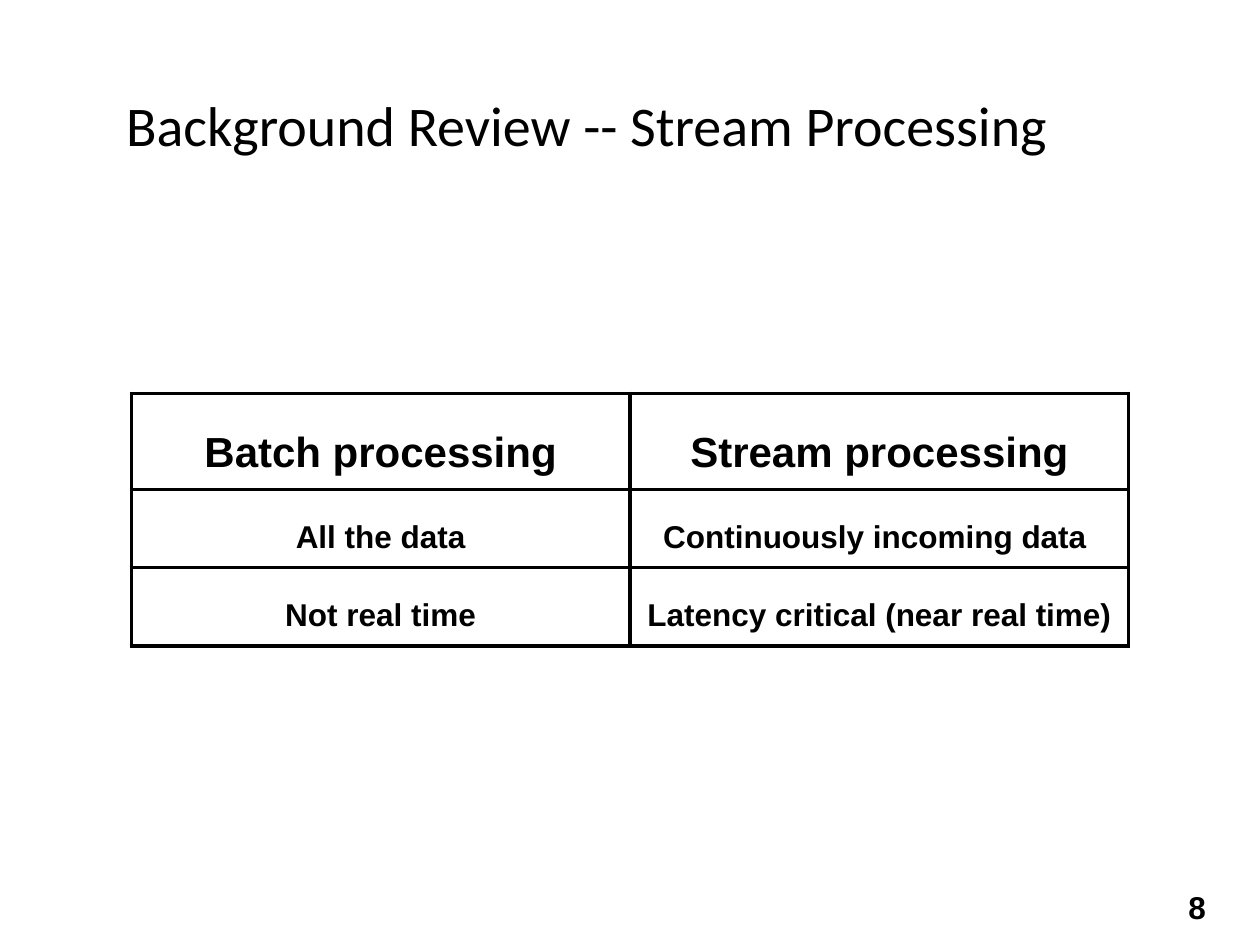
from pptx import Presentation
from pptx.dml.color import RGBColor
from pptx.enum.text import MSO_ANCHOR, PP_ALIGN
from pptx.oxml import parse_xml
from pptx.oxml.ns import nsdecls
from pptx.util import Pt

MIDDLE, BOTTOM = MSO_ANCHOR.MIDDLE, MSO_ANCHOR.BOTTOM
LEFT, CENTER = PP_ALIGN.LEFT, PP_ALIGN.CENTER
TITLE_ONLY = 5
BLACK = "000000"
MARGIN = Pt(7.2)

COMPARISON = [
    ("Batch processing", "Stream processing"),
    ("All the data", "Continuously incoming data "),
    ("Not real time", "Latency critical (near real time)"),
]
ROW_HEIGHTS = (55, 44.5, 44.5)
TEXT_SIZES = (24, 18, 18)
COLUMN_WIDTH = 285


def color(hex_string):
    return RGBColor.from_string(hex_string)


def set_margins(target):
    target.margin_left = target.margin_right = MARGIN
    target.margin_top = target.margin_bottom = MARGIN


def write(frame, text, size, name="Arial", bold=True, align=CENTER):
    frame.text = text
    paragraph = frame.paragraphs[0]
    paragraph.alignment = align
    font = paragraph.font
    font.name, font.size, font.bold = name, Pt(size), bold
    font.color.rgb = color(BLACK)
    return paragraph


def place_text(shape, left, top, width, height, anchor):
    shape.left, shape.top = Pt(left), Pt(top)
    shape.width, shape.height = Pt(width), Pt(height)
    frame = shape.text_frame
    frame.word_wrap = True
    frame.vertical_anchor = anchor
    set_margins(frame)
    return frame


def add_borders(cell, width=2.25):
    properties = cell._tc.get_or_add_tcPr()
    for position, side in enumerate(("lnL", "lnR", "lnT", "lnB")):
        properties.insert(position, parse_xml(
            f'<a:{side} {nsdecls("a")} w="{Pt(width)}"><a:solidFill>'
            f'<a:srgbClr val="{BLACK}"/></a:solidFill></a:{side}>'))


def add_comparison(slide, left, top):
    table = slide.shapes.add_table(
        len(COMPARISON), 2, Pt(left), Pt(top),
        Pt(2 * COLUMN_WIDTH), Pt(sum(ROW_HEIGHTS))).table
    table.first_row = table.horz_banding = False
    for column in table.columns:
        column.width = Pt(COLUMN_WIDTH)
    for row, height, size, texts in zip(
            table.rows, ROW_HEIGHTS, TEXT_SIZES, COMPARISON):
        row.height = Pt(height)
        for cell, text in zip(row.cells, texts):
            cell.fill.background()
            cell.vertical_anchor = MIDDLE
            set_margins(cell)
            write(cell.text_frame, text, size).line_spacing = 1.5
            add_borders(cell)


def main():
    deck = Presentation()
    deck.slide_width, deck.slide_height = Pt(720), Pt(540)
    slide = deck.slides.add_slide(deck.slide_layouts[TITLE_ONLY])

    # Title
    title = place_text(slide.shapes.title, 0, 42, 671, 55.5, BOTTOM)
    write(title, "Background Review -- Stream Processing", 32, "Calibri", False)

    # Batch and stream comparison
    add_comparison(slide, 75, 224.75)

    # Page number
    number_box = slide.shapes.add_textbox(0, 0, 0, 0)
    page_number = place_text(number_box, 672, 504, 42, 29, MIDDLE)
    write(page_number, "8", 18, align=LEFT)

    deck.save("out.pptx")


if __name__ == "__main__":
    main()
